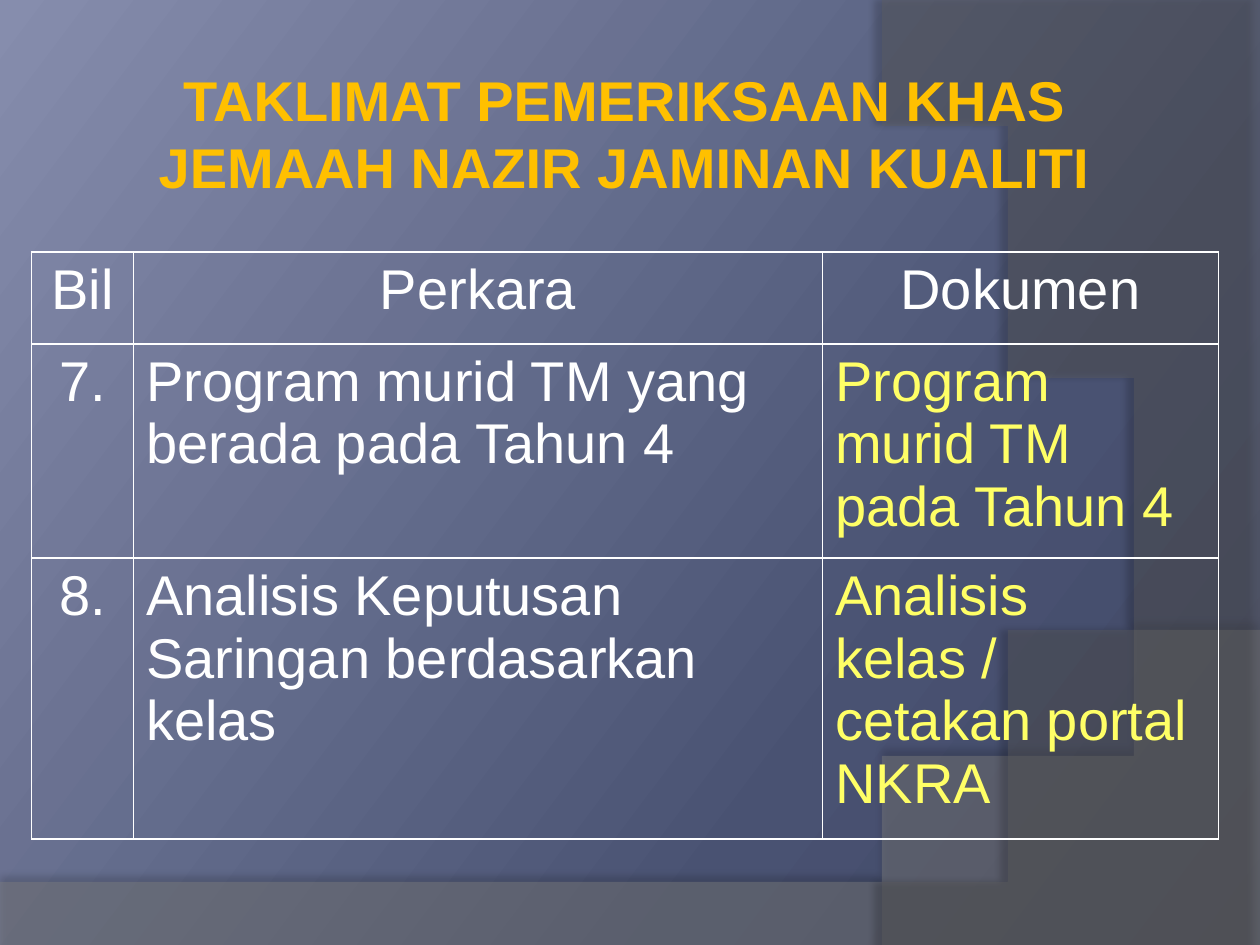
from copy import deepcopy

from lxml import etree
from pptx import Presentation
from pptx.dml.color import RGBColor
from pptx.enum.text import MSO_ANCHOR, MSO_AUTO_SIZE, PP_ALIGN
from pptx.oxml import parse_xml
from pptx.oxml.ns import nsdecls, qn
from pptx.util import Inches, Pt

LEFT, CENTER = PP_ALIGN.LEFT, PP_ALIGN.CENTER
WHITE, GOLD, YELLOW = "FFFFFF", "FFC000", "FFFF66"

# Content
TITLE = ["TAKLIMAT PEMERIKSAAN KHAS", "JEMAAH NAZIR JAMINAN KUALITI"]
ROWS = [
    ("Bil", "Perkara", "Dokumen"),
    ("7.", "Program murid TM yang berada pada Tahun 4",
     "Program murid TM pada Tahun 4"),
    ("8.", "Analisis Keputusan Saringan berdasarkan kelas",
     "Analisis kelas / cetakan portal NKRA"),
]
COLS = [0.81, 5.47, 3.14]
HEIGHTS = [0.73, 1.7, 2.23]
STOPS = [(0, "3D4460"), (0.3, "495272"), (1, "868DAD")]

# Each wave: straight corners, then one curve given by its four points
WAVES = [
    dict(lines=[(0, 7.05), (0, 7.51), (10, 7.51)],
         curve=[(10, 5.2), (5.59, 7.29), (3.91, 7.19), (0, 7.05)],
         fill="7F7F7F", alpha=45, shade=35, dist=3.5, turn=270),
    dict(lines=[(10, 0.02), (10, 7.5)],
         curve=[(7.03, 7.5), (8.91, 6.19), (9.47, 2.75), (6.68, 0)],
         fill="5E5E5E", alpha=40, shade=45, dist=4, turn=180),
]


def color(text):
    return RGBColor.from_string(text)


def style(para, text, tint, align, bold=False):
    para.alignment = align
    run = para.add_run()
    run.text = text
    look = dict(name="Arial", size=Pt(32), bold=bold)
    for key, value in look.items():
        setattr(run.font, key, value)
    run.font.color.rgb = color(tint)


def bend(pts, steps=60):
    """Points along a cubic curve."""
    for i in range(steps + 1):
        t = i / steps
        parts = ((1 - t) ** 3, 3 * t * (1 - t) ** 2,
                 3 * t * t * (1 - t), t ** 3)
        yield tuple(sum(w * p[k] for w, p in zip(parts, pts))
                    for k in (0, 1))


def add_wave(slide, wave):
    first, *rest = wave["lines"] + list(bend(wave["curve"]))
    pen = slide.shapes.build_freeform(*first, scale=Inches(1))
    pen.add_line_segments(rest, close=True)
    shape = pen.convert_to_shape()
    shape.line.fill.background()
    shape.fill.solid()
    shape.fill.fore_color.rgb = color(wave["fill"])
    props = shape.element.spPr
    tint = props.find(qn("a:solidFill"))[0]
    etree.SubElement(tint, qn("a:alpha"), val=str(wave["alpha"] * 1000))
    props.append(parse_xml(
        f'<a:effectLst {nsdecls("a")}><a:outerShdw blurRad="{Pt(4)}" '
        f'dist="{Pt(wave["dist"])}" dir="{wave["turn"] * 60000}" '
        'algn="ctr" rotWithShape="0"><a:srgbClr val="000000">'
        f'<a:alpha val="{wave["shade"] * 1000}"/></a:srgbClr>'
        '</a:outerShdw></a:effectLst>'))


def add_edges(cell):
    props = cell._tc.get_or_add_tcPr()
    for i, side in enumerate(("lnL", "lnR", "lnT", "lnB")):
        props.insert(i, parse_xml(
            f'<a:{side} {nsdecls("a")} w="{Pt(1)}"><a:solidFill>'
            f'<a:srgbClr val="{WHITE}"/></a:solidFill></a:{side}>'))


deck = Presentation()
deck.slide_width, deck.slide_height = Inches(10), Inches(7.5)
slide = deck.slides.add_slide(deck.slide_layouts[5])

# Background
back = slide.background.fill
back.gradient()
back.gradient_angle = 143
stops = back.gradient_stops
stop_list = slide.background._cSld.find(".//" + qn("a:gsLst"))
stop_list.append(deepcopy(stop_list[-1]))
for stop, (pos, tint) in zip(back.gradient_stops, STOPS):
    stop.position = pos
    stop.color.rgb = color(tint)
for wave in WAVES:
    add_wave(slide, wave)

# Title, in front of the waves
title = slide.shapes.title
slide.shapes._spTree.append(title.element)
title.left, title.top = Inches(0.33), Inches(0.46)
title.width, title.height = Inches(9.25), Inches(1.18)
frame = title.text_frame
frame.word_wrap = True
frame.auto_size = MSO_AUTO_SIZE.NONE
frame.vertical_anchor = MSO_ANCHOR.MIDDLE
for i, text in enumerate(TITLE):
    para = frame.add_paragraph() if i else frame.paragraphs[0]
    style(para, text, GOLD, CENTER, bold=True)

# Table
table = slide.shapes.add_table(
    len(ROWS), len(COLS), Inches(0.25), Inches(2),
    Inches(sum(COLS)), Inches(sum(HEIGHTS))).table
for col, width in zip(table.columns, COLS):
    col.width = Inches(width)
for r, (row, height) in enumerate(zip(ROWS, HEIGHTS)):
    table.rows[r].height = Inches(height)
    for c, text in enumerate(row):
        cell = table.cell(r, c)
        cell.fill.background()
        add_edges(cell)
        tint = YELLOW if r and c == 2 else WHITE
        align = LEFT if r and c else CENTER
        style(cell.text_frame.paragraphs[0], text, tint, align)

deck.save("out.pptx")
